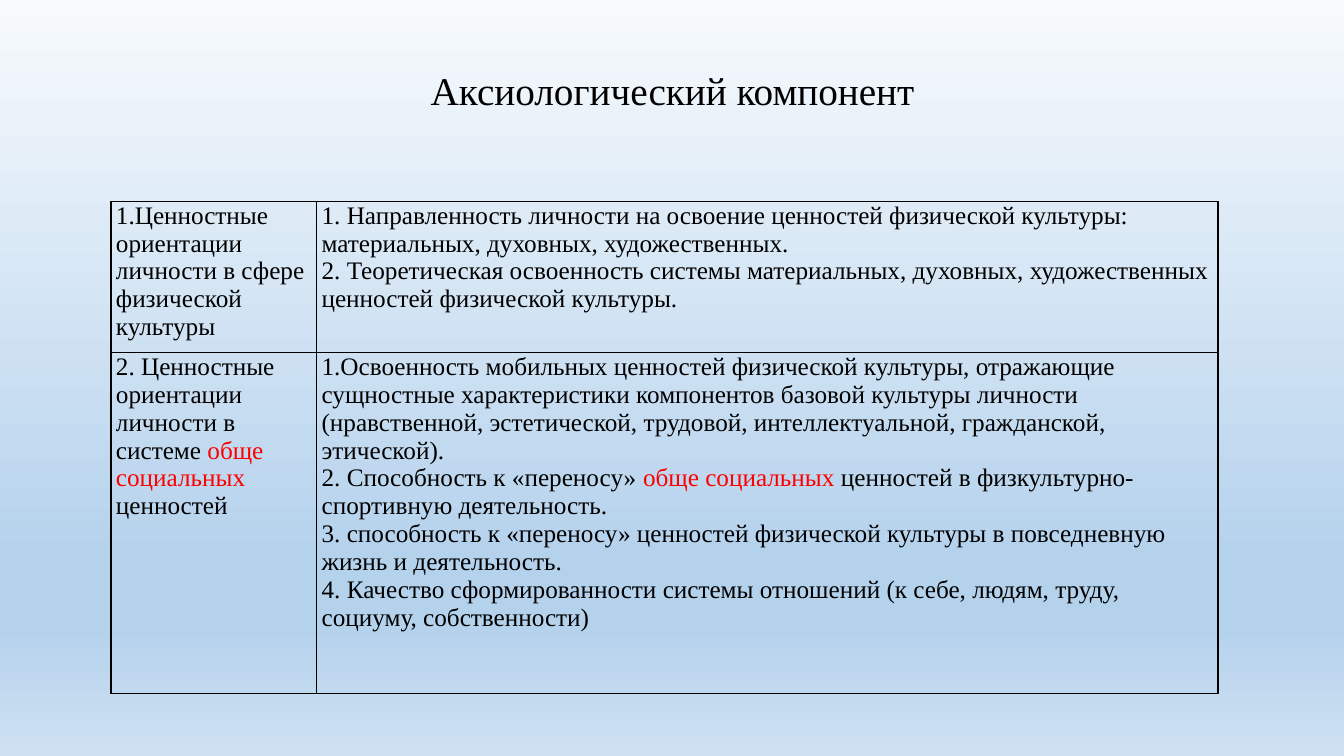
from lxml import etree
from pptx import Presentation
from pptx.dml.color import RGBColor
from pptx.enum.text import MSO_ANCHOR, PP_ALIGN
from pptx.oxml.ns import qn
from pptx.util import Inches, Pt

CENTER = PP_ALIGN.CENTER
MIDDLE = MSO_ANCHOR.MIDDLE

COLORS = {
    "text": "000000",
    "accent": "FF0000",
    "border": "000000",
    "sky_top": "F7FAFD",
    "sky_deep": "B5D2EC",
    "sky_bottom": "CEE1F2",
}

SKY = [(0, "sky_top"), (74, "sky_deep"), (83, "sky_deep"), (100, "sky_bottom")]

TITLE = "Аксиологический компонент"

COMPONENTS = [
    [
        [[("1.Ценностные ориентации личности в сфере физической культуры", "text")]],
        [
            [("1. Направленность личности на освоение ценностей физической культуры: "
              "материальных, духовных, художественных.", "text")],
            [("2. Теоретическая освоенность системы материальных, духовных, "
              "художественных ценностей физической культуры.", "text")],
        ],
    ],
    [
        [[("2. Ценностные ориентации личности в системе ", "text"),
          ("обще социальных", "accent"),
          (" ценностей", "text")]],
        [
            [("1.Освоенность мобильных ценностей физической культуры, отражающие "
              "сущностные характеристики компонентов базовой культуры личности "
              "(нравственной, эстетической, трудовой, интеллектуальной, "
              "гражданской, этической).", "text")],
            [("2. Способность к «переносу» ", "text"),
             ("обще социальных ", "accent"),
             ("ценностей в физкультурно-спортивную деятельность.", "text")],
            [("3. способность к «переносу» ценностей физической культуры в "
              "повседневную жизнь и деятельность.", "text")],
            [("4. Качество сформированности системы отношений (к себе, людям, "
              "труду, социуму, собственности)", "text")],
        ],
    ],
]


class SlideBuilder:
    font = "Times New Roman"
    title_size = 28
    body_size = 18
    border_width = 1

    def __init__(self, slide):
        self.slide = slide

    def background(self, stops):
        fill = self.slide.background.fill
        fill.gradient()
        fill.gradient_angle = 270
        stop_list = self.slide.element.find(".//" + qn("a:gsLst"))
        for default_stop in list(stop_list):
            stop_list.remove(default_stop)
        for percent, color in stops:
            stop = etree.SubElement(stop_list, qn("a:gs"), pos=str(percent * 1000))
            etree.SubElement(stop, qn("a:srgbClr"), val=COLORS[color])

    def run(self, paragraph, text, size, color):
        run = paragraph.add_run()
        run.text = text
        run.font.name = self.font
        run.font.size = Pt(size)
        run.font.color.rgb = RGBColor.from_string(COLORS[color])

    def title(self, text, left, top, width, height):
        box = self.slide.shapes.add_textbox(
            Inches(left), Inches(top), Inches(width), Inches(height))
        frame = box.text_frame
        frame.word_wrap = True
        frame.vertical_anchor = MIDDLE
        frame.margin_bottom = Inches(0.45)
        paragraph = frame.paragraphs[0]
        paragraph.alignment = CENTER
        paragraph.line_spacing = 0.9
        self.run(paragraph, text, self.title_size, "text")

    def borders(self, cell):
        properties = cell._tc.get_or_add_tcPr()
        for position, side in enumerate(("a:lnL", "a:lnR", "a:lnT", "a:lnB")):
            line = etree.Element(qn(side), w=str(Pt(self.border_width)))
            fill = etree.SubElement(line, qn("a:solidFill"))
            etree.SubElement(fill, qn("a:srgbClr"), val=COLORS["border"])
            properties.insert(position, line)

    def cell(self, cell, paragraphs):
        cell.fill.background()
        cell.margin_left = cell.margin_right = Inches(0.05)
        cell.margin_top = cell.margin_bottom = 0
        self.borders(cell)
        frame = cell.text_frame
        for index, runs in enumerate(paragraphs):
            paragraph = frame.add_paragraph() if index else frame.paragraphs[0]
            for text, color in runs:
                self.run(paragraph, text, self.body_size, color)

    def table(self, rows, left, top, widths, heights):
        table = self.slide.shapes.add_table(
            len(heights), len(widths), Inches(left), Inches(top),
            Inches(sum(widths)), Inches(sum(heights))).table
        table.first_row = False
        table.horz_banding = False
        for column, width in zip(table.columns, widths):
            column.width = Inches(width)
        for row, height, contents in zip(table.rows, heights, rows):
            row.height = Inches(height)
            for cell, paragraphs in zip(row.cells, contents):
                self.cell(cell, paragraphs)


def main():
    presentation = Presentation()
    presentation.slide_width = Inches(13.33)
    presentation.slide_height = Inches(7.5)
    builder = SlideBuilder(
        presentation.slides.add_slide(presentation.slide_layouts[6]))
    builder.background(SKY)
    builder.title(TITLE, 0.92, 0.4, 11.5, 1.45)
    builder.table(COMPONENTS, 1.1, 2, [2.04, 8.94], [1.38, 3.38])
    presentation.save("out.pptx")


if __name__ == "__main__":
    main()
